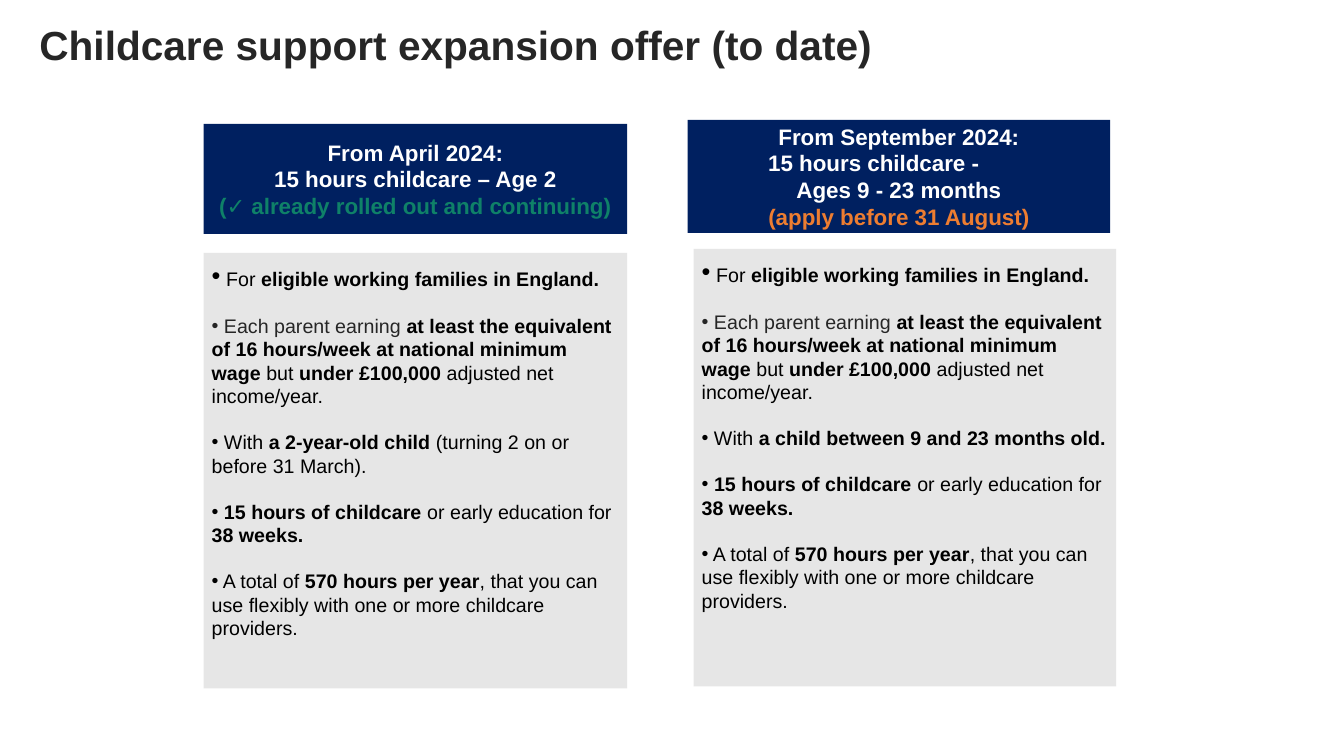
from lxml.etree import SubElement
from pptx import Presentation
from pptx.dml.color import RGBColor
from pptx.enum.shapes import MSO_SHAPE
from pptx.enum.text import MSO_ANCHOR, PP_ALIGN
from pptx.oxml.ns import qn
from pptx.util import Inches, Pt


def rgb(value):
    return RGBColor.from_string(value)


class Deck:
    FONT = "Arial"
    NAVY, GREY, WHITE, BLACK, DARK = "002060", "E0E0E0", "FFFFFF", "000000", "262626"

    def __init__(self, prs):
        self.s = prs.slides.add_slide(prs.slide_layouts[6])

    def run(self, p, text, size, color, bold=False, font=FONT):
        r = p.add_run()
        r.text = text
        r.font.name, r.font.size, r.font.bold = font, Pt(size), bold
        r.font.color.rgb = rgb(color)

    def margins(self, tf, left, other):
        tf.word_wrap = True
        tf.margin_left = Inches(left)
        tf.margin_top = tf.margin_right = tf.margin_bottom = Inches(other)

    def title(self, text, box):
        tf = self.s.shapes.add_textbox(*map(Inches, box)).text_frame
        self.margins(tf, 0.39, 0.12)
        tf.vertical_anchor = MSO_ANCHOR.MIDDLE
        p = tf.paragraphs[0]
        p.line_spacing = 0.9
        self.run(p, text, 29, self.DARK, bold=True)

    def panel(self, box, color, opacity=None):
        sp = self.s.shapes.add_shape(MSO_SHAPE.RECTANGLE, *map(Inches, box))
        sp.shadow.inherit = False
        sp.line.fill.background()
        sp.fill.solid()
        sp.fill.fore_color.rgb = rgb(color)
        if opacity:
            clr = sp.fill._xPr.find(".//" + qn("a:srgbClr"))
            SubElement(clr, qn("a:alpha"), val=str(opacity * 1000))
        return sp.text_frame

    def header(self, box, lines):
        """Each line is (text, color, left indent); an indented line is left-aligned."""
        tf = self.panel(box, self.NAVY)
        tf.word_wrap = True
        tf.vertical_anchor = MSO_ANCHOR.MIDDLE
        for i, (text, color, indent) in enumerate(lines):
            p = tf.add_paragraph() if i else tf.paragraphs[0]
            p.alignment = PP_ALIGN.LEFT if indent else PP_ALIGN.CENTER
            if indent:
                p._p.get_or_add_pPr().set("marL", str(Inches(indent)))
            self.run(p, text, 16, color, bold=True)

    def bullets(self, box, items):
        """Each item is (lead color, text), with ** around the bold parts of the text."""
        tf = self.panel(box, self.GREY, opacity=79)
        self.margins(tf, 0.08, 0.08)
        tf.vertical_anchor = MSO_ANCHOR.TOP
        for i, (lead, text) in enumerate(items):
            p = tf.add_paragraph() if i else tf.paragraphs[0]
            pPr = p._p.get_or_add_pPr()
            SubElement(pPr, qn("a:buFont"), typeface=self.FONT)
            SubElement(pPr, qn("a:buChar"), char="•")
            p.alignment = PP_ALIGN.LEFT
            if i:
                p.space_before = Pt(16)
                text = " " + text
            else:
                self.run(p, " ", 18, lead, font="Calibri")
            for k, part in enumerate(text.split("**")):
                if part:
                    self.run(p, part, 14, self.BLACK if k else lead, bold=k % 2 == 1)


def offer_items(child):
    return [
        (Deck.BLACK, "For **eligible working families in England.**"),
        (Deck.DARK, "Each parent earning **at least the equivalent of 16 hours/week at national "
                    "minimum wage **but **under £100,000 **adjusted net income/year."),
        (Deck.BLACK, "With " + child),
        (Deck.BLACK, "**15 hours of childcare **or early education for **38 weeks.**"),
        (Deck.BLACK, "A total of **570 hours per year**, that you can use flexibly with one "
                     "or more childcare providers."),
    ]


def main():
    prs = Presentation()
    prs.slide_width, prs.slide_height = Inches(13.33), Inches(7.5)
    deck = Deck(prs)
    deck.title("Childcare support expansion offer (to date)", (0, -0.26, 11.98, 1.45))

    deck.header((2.02, 1.23, 4.2, 1.09), [
        ("From April 2024:", Deck.WHITE, 0),
        ("15 hours childcare – Age 2", Deck.WHITE, 0),
        ("(✓ already rolled out and continuing)", "0F8168", 0),
    ])
    deck.bullets((2.02, 2.51, 4.2, 4.32),
                 offer_items("**a 2-year-old child **(turning 2 on or before 31 March)."))

    deck.header((6.82, 1.19, 4.19, 1.12), [
        ("From September 2024:", Deck.WHITE, 0),
        ("15 hours childcare -", Deck.WHITE, 0.7),
        ("Ages 9 - 23 months", Deck.WHITE, 0),
        ("(apply before 31 August)", "ED7D31", 0),
    ])
    deck.bullets((6.88, 2.47, 4.19, 4.34),
                 offer_items("**a child between 9 and 23 months old.**"))
    prs.save("out.pptx")


if __name__ == "__main__":
    main()
